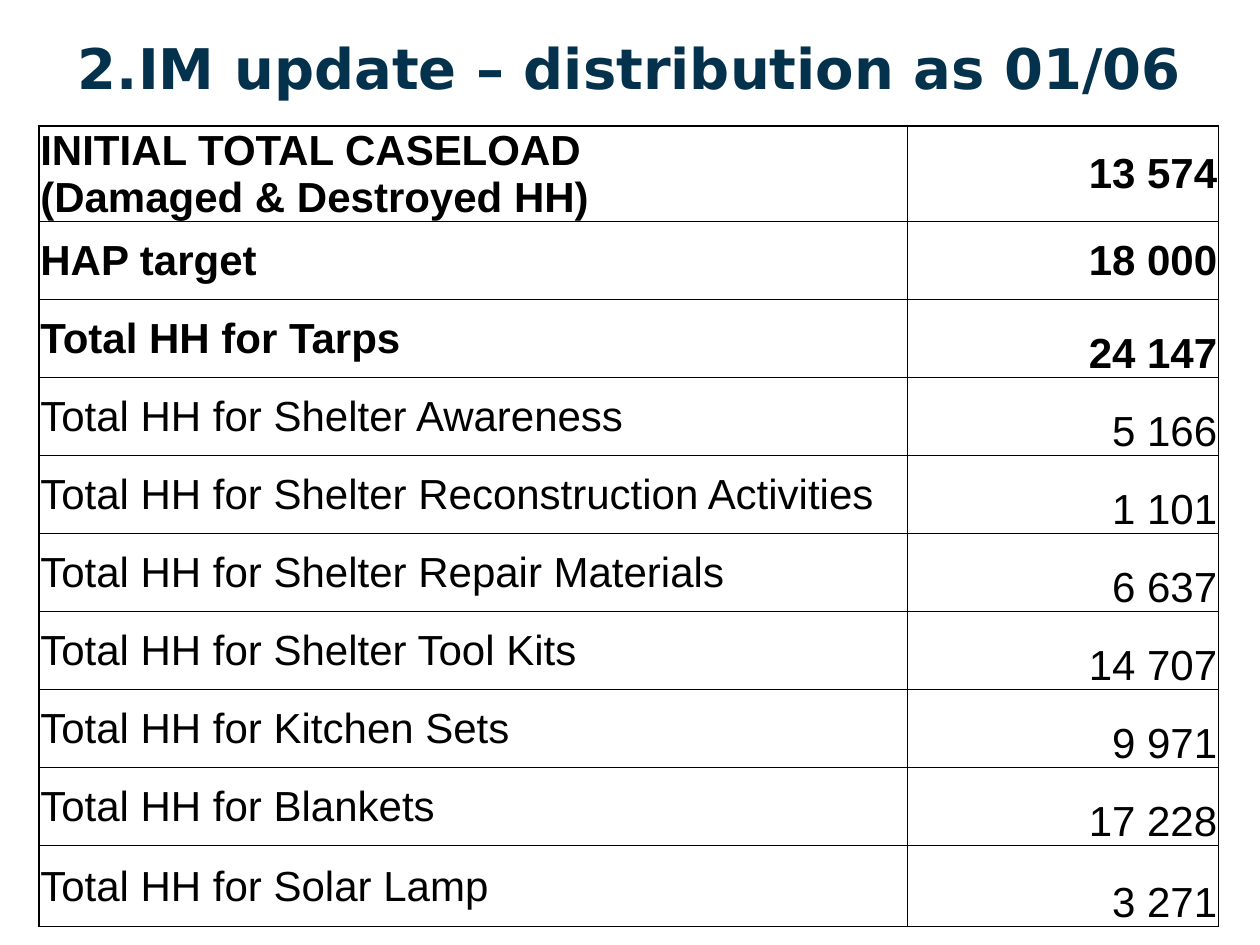
import pptx
import pptx.util
import pptx.dml.color
import pptx.enum.text
import pptx.oxml
import pptx.oxml.ns

Pt = pptx.util.Pt
RGB = pptx.dml.color.RGBColor
ANCHOR = pptx.enum.text.MSO_ANCHOR
ALIGN = pptx.enum.text.PP_ALIGN

# Content
TITLE = "2.IM update – distribution as 01/06"
ROWS = [
    ("INITIAL TOTAL CASELOAD\n(Damaged & Destroyed HH)", "13 574"),
    ("HAP target", "18 000"),
    ("Total HH for Tarps", "24 147"),
    ("Total HH for Shelter Awareness", "5 166"),
    ("Total HH for Shelter Reconstruction Activities", "1 101"),
    ("Total HH for Shelter Repair Materials", "6 637"),
    ("Total HH for Shelter Tool Kits", "14 707"),
    ("Total HH for Kitchen Sets", "9 971"),
    ("Total HH for Blankets", "17 228"),
    ("Total HH for Solar Lamp", "3 271"),
]
BOLD_ROWS = 3      # the leading rows in bold
CENTRED_VALUES = 2  # the leading values anchored to the middle

THEME = {
    "title": {"name": "DejaVu Sans", "size": 32, "color": "04314C"},
    "body": {"name": "Arial", "size": 24, "color": "000000"},
    "border": "000000",
    "outer": 1,
    "inner": 0.5,
}

# Geometry in points
LEFT, TOP = 22.3, 72
COLUMNS = (496, 178)
ROW_HEIGHT, LAST_HEIGHT = 44.64, 46.1
INSET = 0.75


def style(tf, look, bold, align):
    for p in tf.paragraphs:
        p.alignment = align
        for r in p.runs:
            r.font.name = look["name"]
            r.font.size = Pt(look["size"])
            r.font.bold = bold
            r.font.color.rgb = RGB.from_string(look["color"])


def set_borders(cell, widths):
    tc_pr = cell._tc.get_or_add_tcPr()
    for index, (side, width) in enumerate(widths.items()):
        line = pptx.oxml.parse_xml(
            f'<a:ln{side} {pptx.oxml.ns.nsdecls("a")} w="{int(Pt(width))}">'
            f'<a:solidFill><a:srgbClr val="{THEME["border"]}"/></a:solidFill>'
            f'</a:ln{side}>')
        tc_pr.insert(index, line)


prs = pptx.Presentation()
prs.slide_width, prs.slide_height = Pt(720), Pt(540)
s = prs.slides.add_slide(prs.slide_layouts[5])

# Title
title = s.shapes.title
title.left, title.top, title.width, title.height = Pt(0), Pt(10), Pt(720), Pt(57)
tf = title.text_frame
tf.text = TITLE
tf.vertical_anchor = ANCHOR.MIDDLE
style(tf, THEME["title"], True, ALIGN.CENTER)

# Distribution table
heights = [ROW_HEIGHT] * (len(ROWS) - 1) + [LAST_HEIGHT]
frame = s.shapes.add_table(len(ROWS), len(COLUMNS), Pt(LEFT), Pt(TOP),
                           Pt(sum(COLUMNS)), Pt(sum(heights)))
table = frame.table
table.first_row = table.horz_banding = False
for column, width in zip(table.columns, COLUMNS):
    column.width = Pt(width)
for row, height in zip(table.rows, heights):
    row.height = Pt(height)

for i, texts in enumerate(ROWS):
    for j, text in enumerate(texts):
        cell = table.cell(i, j)
        cell.text_frame.text = text
        cell.margin_left = cell.margin_right = cell.margin_top = Pt(INSET)
        cell.margin_bottom = Pt(0)
        middle = j == 0 or i < CENTRED_VALUES
        cell.vertical_anchor = ANCHOR.MIDDLE if middle else ANCHOR.BOTTOM
        style(cell.text_frame, THEME["body"], i < BOLD_ROWS,
              ALIGN.RIGHT if j else ALIGN.LEFT)
        cell.fill.background()
        edges = {"L": j == 0, "R": j == len(COLUMNS) - 1,
                 "T": i == 0, "B": i == len(ROWS) - 1}
        set_borders(cell, {side: THEME["outer" if on_edge else "inner"]
                           for side, on_edge in edges.items()})

prs.save("out.pptx")
